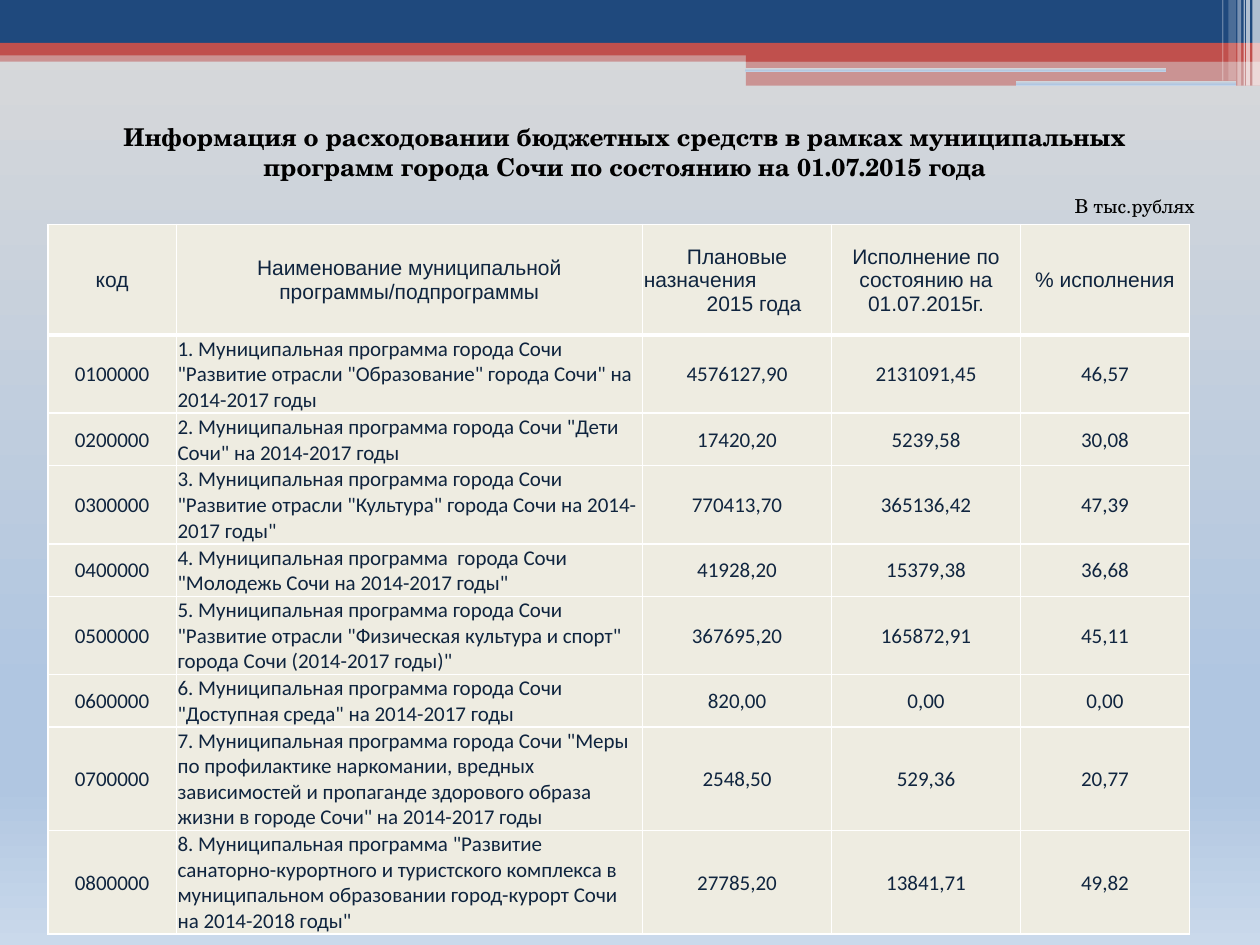
import pptx
import pptx.util
import pptx.dml.color
import pptx.enum.shapes
import pptx.enum.text
import pptx.oxml.ns
import lxml.etree
from dataclasses import dataclass

Inches, Pt, qn = pptx.util.Inches, pptx.util.Pt, pptx.oxml.ns.qn
RGB = pptx.dml.color.RGBColor.from_string
SHAPE = pptx.enum.shapes.MSO_SHAPE
ALIGN = pptx.enum.text.PP_ALIGN
LEFT, CENTER = ALIGN.LEFT, ALIGN.CENTER


@dataclass(frozen=True)
class Theme:
    blue: str = "1F497D"
    red: str = "C0504D"
    white: str = "FFFFFF"
    black: str = "000000"
    cell: str = "EEECE1"
    ink: str = "0F243E"
    number: str = "10253F"
    sky: tuple = ((0, "D9D9D9"), (74, "B0C6E1"), (83, "B0C6E1"), (100, "CAD9EB"))
    serif: str = "TeX Gyre Schola"
    head: str = "Arial"
    body: str = "Calibri"
    title_size: int = 14
    table_size: int = 12
    unit_size: int = 11


T = Theme()


def sky_fill(fill, element):
    fill.gradient()
    fill.gradient_angle = 270
    stops = element.find(".//" + qn("a:gsLst"))
    stops.clear()
    for pos, color in T.sky:
        gs = lxml.etree.SubElement(stops, qn("a:gs"), pos=str(pos * 1000))
        lxml.etree.SubElement(gs, qn("a:srgbClr"), val=color)


def add_run(p, text, font, size, color, align, bold=False):
    p.alignment = align
    r = p.add_run()
    r.text = text
    r.font.name, r.font.size, r.font.bold = font, Pt(size), bold
    r.font.color.rgb = RGB(color)


prs = pptx.Presentation()
prs.slide_width, prs.slide_height = Inches(10), Inches(7.5)
s = prs.slides.add_slide(prs.slide_layouts[6])
sky_fill(s.background.fill, s._element)

# Top banner: left, top, width, height, colour (None for the sky), opacity %
banner = [
    (0, 0.4, 10, 0.09, T.red, 50),
    (0, 0, 10, 0.34, T.blue, 100),
    (0, 0.34, 10, 0.1, T.red, 100),
    (5.92, 0.39, 4.08, 0.1, T.red, 100),
    (5.92, 0.48, 4.08, 0.2, T.red, 50),
    (5.91, 0.54, 3.35, 0.03, None, 100),
    (8.06, 0.64, 1.75, 0.04, None, 100),
    (9.94, 0, 0.06, 0.68, T.white, 65),
    (9.89, 0, 0.03, 0.68, T.white, 65),
    (9.87, 0, 0.01, 0.68, T.white, 60),
    (9.82, 0, 0.03, 0.68, T.white, 40),
    (9.75, 0, 0.06, 0.64, T.white, 20),
    (9.7, 0, 0.01, 0.64, T.white, 30),
]
for x, y, w, h, color, opacity in banner:
    kind = SHAPE.RECTANGLE if color else SHAPE.ROUNDED_RECTANGLE
    sp = s.shapes.add_shape(kind, Inches(x), Inches(y), Inches(w), Inches(h))
    sp.shadow.inherit = False
    sp.line.fill.background()
    if color is None:
        sky_fill(sp.fill, sp._element)
        continue
    sp.fill.solid()
    sp.fill.fore_color.rgb = RGB(color)
    if opacity < 100:
        clr = sp._element.spPr.find(qn("a:solidFill")).find(qn("a:srgbClr"))
        lxml.etree.SubElement(clr, qn("a:alpha"), val=str(opacity * 1000))

# Programme table: code, name, plan, actual, percent
header = ["код", "Наименование муниципальной программы/подпрограммы", "Плановые\nназначения\n2015 года",
          "Исполнение по состоянию на 01.07.2015г.", "% исполнения"]
programmes = [
    ('1. Муниципальная программа города Сочи "Развитие отрасли "Образование" города Сочи" на 2014-2017 годы',
     "4576127,90", "2131091,45", "46,57"),
    ('2. Муниципальная программа города Сочи "Дети Сочи" на 2014-2017 годы',
     "17420,20", "5239,58", "30,08"),
    ('3. Муниципальная программа города Сочи "Развитие отрасли "Культура" города Сочи на 2014-2017 годы"',
     "770413,70", "365136,42", "47,39"),
    ('4. Муниципальная программа  города Сочи "Молодежь Сочи на 2014-2017 годы"',
     "41928,20", "15379,38", "36,68"),
    ('5. Муниципальная программа города Сочи "Развитие отрасли "Физическая культура и спорт" '
     'города Сочи (2014-2017 годы)"',
     "367695,20", "165872,91", "45,11"),
    ('6. Муниципальная программа города Сочи "Доступная среда" на 2014-2017 годы',
     "820,00", "0,00", "0,00"),
    ('7. Муниципальная программа города Сочи "Меры по профилактике наркомании, вредных зависимостей '
     'и пропаганде здорового образа жизни в городе Сочи" на 2014-2017 годы',
     "2548,50", "529,36", "20,77"),
    ('8. Муниципальная программа "Развитие санаторно-курортного и туристского комплекса '
     'в муниципальном образовании город-курорт Сочи на 2014-2018 годы"',
     "27785,20", "13841,71", "49,82"),
]
rows = [header] + [[f"0{n}00000", *row] for n, row in enumerate(programmes, 1)]
col_widths = [1.02, 3.7, 1.5, 1.5, 1.34]
table = s.shapes.add_table(len(rows), len(header), Inches(0.38), Inches(1.78),
                           Inches(sum(col_widths)), Inches(5.55)).table
for col, width in zip(table.columns, col_widths):
    col.width = Inches(width)

for i, row in enumerate(rows):
    # Body rows grow to fit their wrapped names
    table.rows[i].height = Inches(0.41 if i else 0.88)
    for j, text in enumerate(row):
        cell = table.cell(i, j)
        cell.vertical_anchor = pptx.enum.text.MSO_ANCHOR.MIDDLE
        cell.margin_left = cell.margin_right = cell.margin_top = Inches(0.01)
        cell.margin_bottom = 0
        tcPr = cell._tc.get_or_add_tcPr()
        for side in "LRTB":
            thick = (i, side) in ((0, "B"), (1, "T"))
            ln = lxml.etree.SubElement(tcPr, qn("a:ln" + side), w=str(Pt(3 if thick else 1)))
            fill = lxml.etree.SubElement(ln, qn("a:solidFill"))
            lxml.etree.SubElement(fill, qn("a:srgbClr"), val=T.white)
        cell.fill.solid()
        cell.fill.fore_color.rgb = RGB(T.cell)
        tf = cell.text_frame
        for k, line in enumerate(text.split("\n")):
            p = tf.add_paragraph() if k else tf.paragraphs[0]
            add_run(p, line, T.body if i else T.head, T.table_size,
                    T.number if i and j > 1 else T.ink,
                    LEFT if (i and j == 1) or k == 1 else CENTER)
            if k == 2:
                p._p.get_or_add_pPr().set("marL", str(Inches(0.27)))

# Title and unit of measure
captions = [
    (0.51, 0.92, 8.9, 0.57, T.title_size, CENTER, True,
     "Информация о расходовании бюджетных средств в рамках муниципальных "
     "программ города Сочи по состоянию на 01.07.2015 года"),
    (8.43, 1.49, 1.57, 0.29, T.unit_size, LEFT, False, "В тыс.рублях"),
]
for x, y, w, h, size, align, bold, text in captions:
    tf = s.shapes.add_textbox(Inches(x), Inches(y), Inches(w), Inches(h)).text_frame
    tf.word_wrap = True
    add_run(tf.paragraphs[0], text, T.serif, size, T.black, align, bold)

prs.save("out.pptx")
